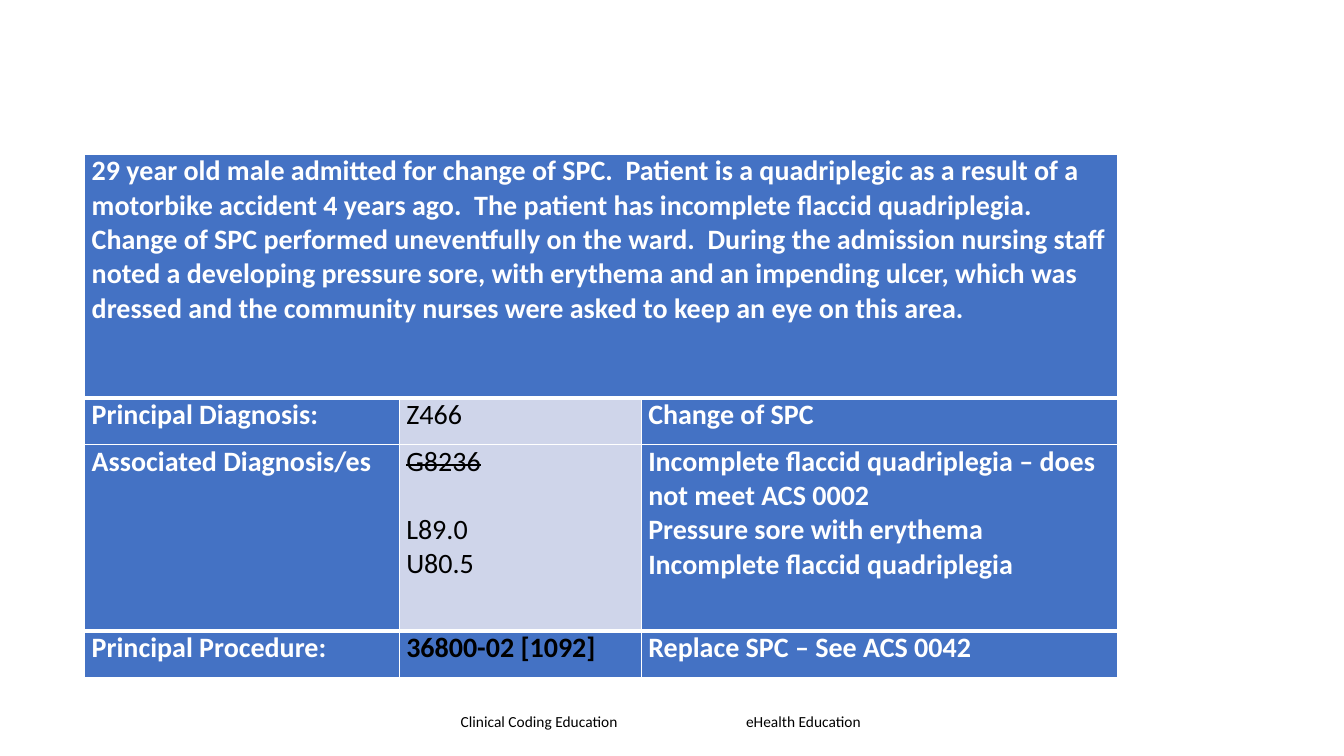
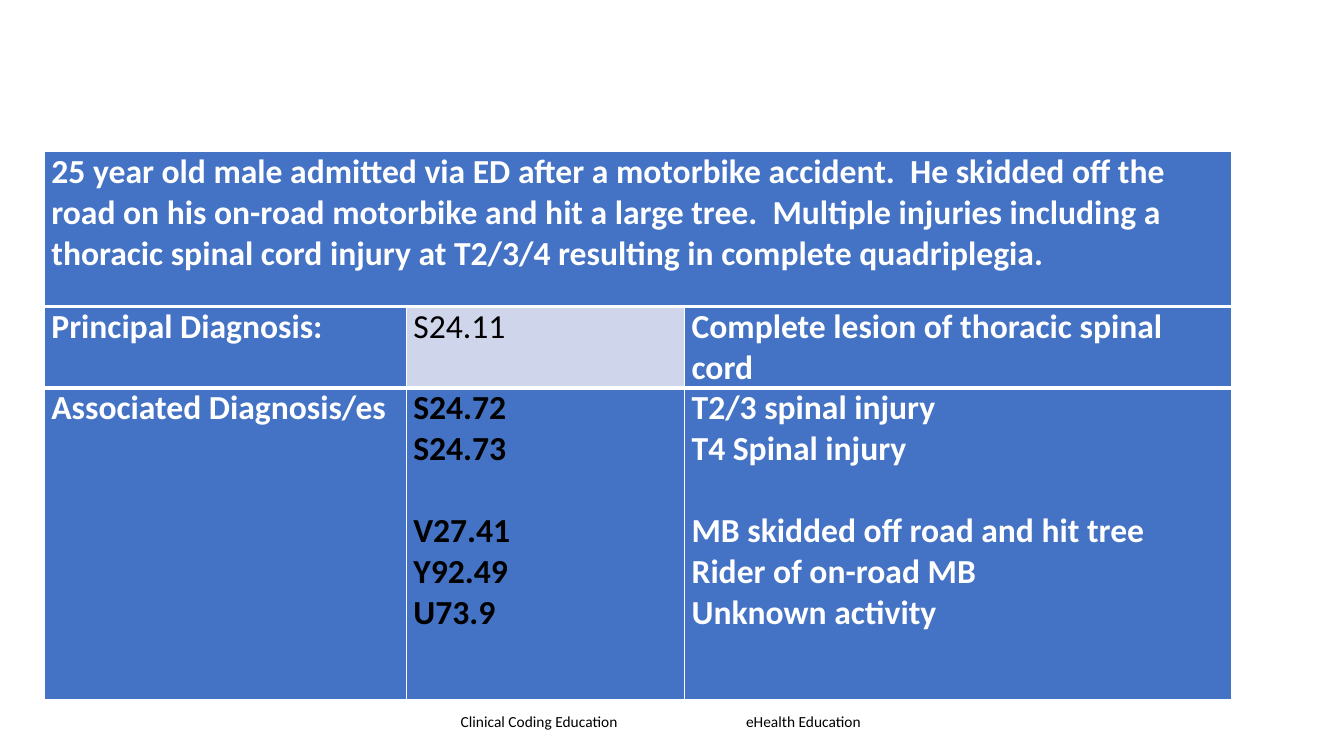
from dataclasses import dataclass

from lxml.etree import SubElement
from pptx import Presentation
from pptx.dml.color import RGBColor
from pptx.enum.text import MSO_ANCHOR
from pptx.oxml.ns import qn
from pptx.util import Inches, Pt

FONT = "Calibri"
WHITE = RGBColor(0xFF, 0xFF, 0xFF)
BLACK = RGBColor(0x00, 0x00, 0x00)
BLUE = RGBColor(0x44, 0x72, 0xC4)
PALE = RGBColor(0xCF, 0xD5, 0xEA)
THIN, THICK = Pt(1), Pt(3)
LINE_HEIGHT = 1.22
CODE_COLUMN = 1


@dataclass(frozen=True)
class Entry:
    text: str
    struck: bool = False
    gap_before: bool = False


@dataclass(frozen=True)
class CodingRow:
    height: float
    label: str
    codes: tuple[Entry, ...]
    meanings: tuple[Entry, ...]


@dataclass(frozen=True)
class CaseStudy:
    left: float
    top: float
    columns: tuple[float, float, float]
    size: int
    story_height: float
    story: str
    rows: tuple[CodingRow, ...]


CASES = (
    CaseStudy(
        0.84, 1.53, (3.12, 2.4, 4.72), 20, 2.42,
        "29 year old male admitted for change of SPC.  Patient is a quadriplegic as a "
        "result of a motorbike accident 4 years ago.  The patient has incomplete flaccid "
        "quadriplegia.  Change of SPC performed uneventfully on the ward.  During the "
        "admission nursing staff noted a developing pressure sore, with erythema and an "
        "impending ulcer, which was dressed and the community nurses were asked to keep "
        "an eye on this area.",
        (
            CodingRow(0.46, "Principal Diagnosis:",
                      (Entry("Z466"),), (Entry("Change of SPC"),)),
            CodingRow(1.85, "Associated Diagnosis/es",
                      (Entry("G8236", struck=True),
                       Entry("L89.0", gap_before=True),
                       Entry("U80.5")),
                      (Entry("Incomplete flaccid quadriplegia – does not meet ACS 0002"),
                       Entry("Pressure sore with erythema"),
                       Entry("Incomplete flaccid quadriplegia"))),
            CodingRow(0.46, "Principal Procedure:",
                      (Entry("36800-02 [1092]"),),
                      (Entry("Replace SPC – See ACS 0042"),)),
        ),
    ),
    CaseStudy(
        0.44, 1.5, (3.59, 2.76, 5.43), 24, 1.54,
        "25 year old male admitted via ED after a motorbike accident.  He skidded off the "
        "road on his on-road motorbike and hit a large tree.  Multiple injuries including "
        "a thoracic spinal cord injury at T2/3/4 resulting in complete quadriplegia.",
        (
            CodingRow(0.81, "Principal Diagnosis:", (Entry("S24.11"),),
                      (Entry("Complete lesion of thoracic spinal cord"),)),
            CodingRow(3.09, "Associated Diagnosis/es",
                      (Entry("S24.72"),
                       Entry("S24.73"),
                       Entry("V27.41", gap_before=True),
                       Entry("Y92.49"),
                       Entry("U73.9")),
                      (Entry("T2/3 spinal injury"),
                       Entry("T4 Spinal injury"),
                       Entry("MB skidded off road and hit tree", gap_before=True),
                       Entry("Rider of on-road MB"),
                       Entry("Unknown activity"))),
        ),
    ),
)


def add_run(paragraph, text: str, size: int, color: RGBColor, bold: bool = False):
    run = paragraph.add_run()
    run.text = text
    run.font.name = FONT
    run.font.size = Pt(size)
    run.font.bold = bold
    run.font.color.rgb = color
    return run


def add_footer(slide) -> None:
    footer = slide.shapes.add_textbox(Inches(4.21), Inches(6.9), Inches(5.04), Inches(0.52))
    frame = footer.text_frame
    frame.word_wrap = True
    frame.vertical_anchor = MSO_ANCHOR.MIDDLE
    frame.margin_left = Inches(0.36)
    paragraph = frame.paragraphs[0]
    tabs = SubElement(paragraph._p.get_or_add_pPr(), qn("a:tabLst"))
    SubElement(tabs, qn("a:tab"), pos=str(Inches(2.83)), algn="l")
    add_run(paragraph, "Clinical Coding Education\teHealth Education", 11, BLACK)


def set_borders(cell, top: int, bottom: int) -> None:
    properties = cell._tc.get_or_add_tcPr()
    for side, width in (("L", THIN), ("R", THIN), ("T", top), ("B", bottom)):
        line = SubElement(properties, qn(f"a:ln{side}"), w=str(width))
        fill = SubElement(line, qn("a:solidFill"))
        SubElement(fill, qn("a:srgbClr"), val=str(WHITE))


def style_cell(cell, row: int, last: int, fill: RGBColor) -> None:
    cell.margin_left = cell.margin_right = Inches(0.07)
    cell.margin_top = cell.margin_bottom = 0
    cell.vertical_anchor = MSO_ANCHOR.TOP
    set_borders(cell,
                top=THICK if row in (1, last) else THIN,
                bottom=THICK if row in (0, last - 1) else THIN)
    cell.fill.solid()
    cell.fill.fore_color.rgb = fill


def write_entries(cell, entries: tuple[Entry, ...], size: int,
                  color: RGBColor, bold: bool) -> None:
    frame = cell.text_frame
    for index, entry in enumerate(entries):
        paragraph = frame.add_paragraph() if index else frame.paragraphs[0]
        if entry.gap_before:
            paragraph.space_before = Pt(size * LINE_HEIGHT)
        run = add_run(paragraph, entry.text, size, color, bold)
        if entry.struck:
            run.font._element.set("strike", "sngStrike")


def add_case_table(slide, case: CaseStudy) -> None:
    heights = [case.story_height, *(row.height for row in case.rows)]
    last = len(case.rows)
    table = slide.shapes.add_table(
        len(heights), len(case.columns), Inches(case.left), Inches(case.top),
        Inches(sum(case.columns)), Inches(sum(heights))).table
    table.first_row = table.horz_banding = False
    for column, width in zip(table.columns, case.columns):
        column.width = Inches(width)
    for row, height in zip(table.rows, heights):
        row.height = Inches(height)

    table.cell(0, 0).merge(table.cell(0, len(case.columns) - 1))
    for column in range(len(case.columns)):
        style_cell(table.cell(0, column), 0, last, BLUE)
    write_entries(table.cell(0, 0), (Entry(case.story),), case.size, WHITE, True)

    for row, coding in enumerate(case.rows, start=1):
        contents = ((Entry(coding.label),), coding.codes, coding.meanings)
        for column, entries in enumerate(contents):
            is_code = column == CODE_COLUMN
            is_pale = is_code and row < last
            cell = table.cell(row, column)
            style_cell(cell, row, last, PALE if is_pale else BLUE)
            write_entries(cell, entries, case.size,
                          BLACK if is_code else WHITE, not is_pale)


def main() -> None:
    deck = Presentation()
    deck.slide_width, deck.slide_height = Inches(13.33), Inches(7.5)
    blank = deck.slide_layouts[6]
    for case in CASES:
        slide = deck.slides.add_slide(blank)
        add_footer(slide)
        add_case_table(slide, case)
    deck.save("out.pptx")


if __name__ == "__main__":
    main()
